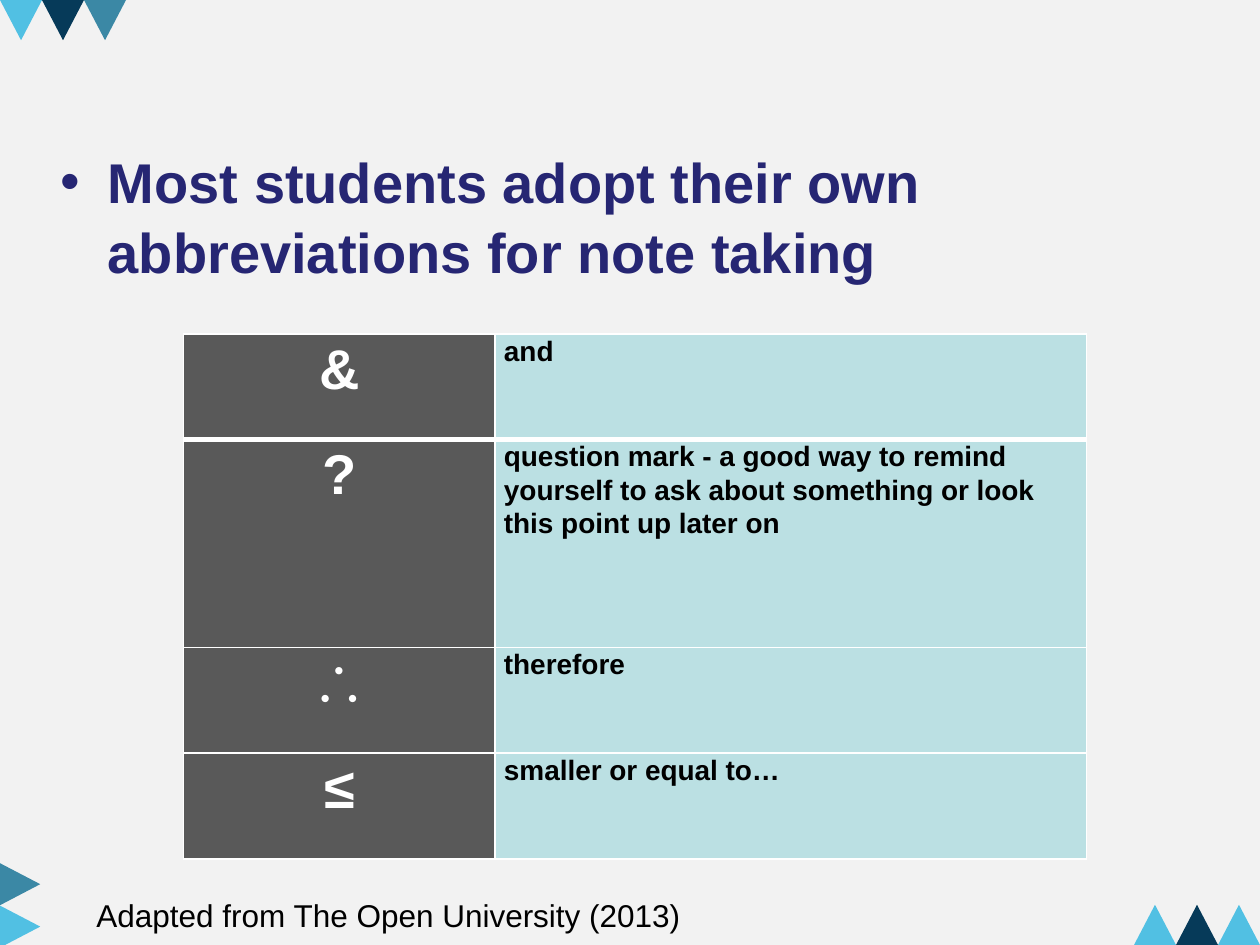
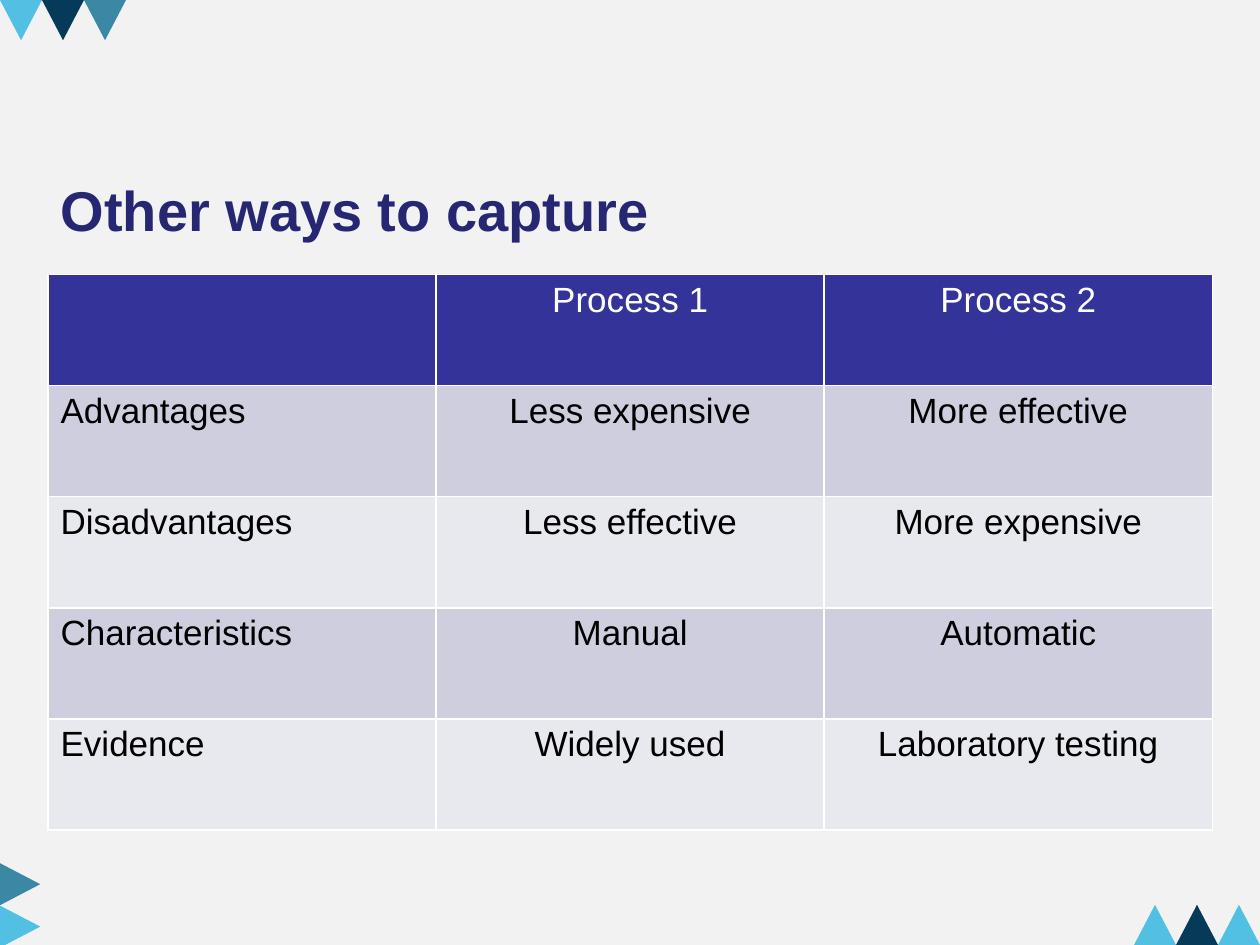
from dataclasses import dataclass

from pptx import Presentation
from pptx.dml.color import RGBColor
from pptx.enum.shapes import MSO_SHAPE as Preset
from pptx.enum.text import MSO_ANCHOR as Anchor, MSO_AUTO_SIZE as AutoSize, PP_ALIGN as Align
from pptx.oxml import parse_xml
from pptx.oxml.ns import nsdecls
from pptx.util import Pt


@dataclass(frozen=True)
class Theme:
    font: str = "Arial"
    background: str = "F2F2F2"
    sky: str = "51C0E3"
    navy: str = "063A59"
    teal: str = "3B88A5"
    heading: str = "262673"
    black: str = "000000"
    white: str = "FFFFFF"
    symbol_fill: str = "595959"
    meaning_fill: str = "BBE0E3"
    header_fill: str = "333399"
    band_fills: tuple = ("CECEDE", "E8E8EF")
    heading_size: int = 32
    table_size: int = 20
    caption_size: int = 18
    meaning_size: int = 16


theme = Theme()


def write(frame, text, size, colour, bold=False, align=Align.LEFT, **para_format):
    frame.word_wrap = True
    para = frame.paragraphs[0]
    span = para.add_run()
    span.text = text
    for name, value in {"alignment": align, "space_before": Pt(0), **para_format}.items():
        setattr(para, name, value)
    for name, value in {"name": theme.font, "size": Pt(size), "bold": bold}.items():
        setattr(span.font, name, value)
    span.font.color.rgb = RGBColor.from_string(colour)


def paint_cell(cell, fill, top=1, bottom=1):
    """Fill a cell and give it white borders; top and bottom are widths in points."""
    properties = cell._tc.get_or_add_tcPr()
    for side, width in {"L": 1, "R": 1, "T": top, "B": bottom}.items():
        properties.append(parse_xml(
            f'<a:ln{side} {nsdecls("a")} w="{Pt(width)}"><a:solidFill>'
            f'<a:srgbClr val="{theme.white}"/></a:solidFill></a:ln{side}>'))
    cell.fill.solid()
    cell.fill.fore_color.rgb = RGBColor.from_string(fill)


deck = Presentation()
deck.slide_width, deck.slide_height = Pt(720), Pt(540)
backdrop = deck.slide_master.background.fill
backdrop.solid()
backdrop.fore_color.rgb = RGBColor.from_string(theme.background)

content_layout, title_only_layout = deck.slide_layouts[1], deck.slide_layouts[5]
symbols_page = deck.slides.add_slide(content_layout)
processes_page = deck.slides.add_slide(title_only_layout)

# Corner triangles: left, top, rotation, colours, step across, step down
triangle_rows = [
    (0, 0, 180, (theme.sky, theme.navy, theme.teal), 24, 0),
    (648, 517, 0, (theme.sky, theme.navy, theme.sky), 24, 0),
    (-0.5, 493.75, 90, (theme.teal, theme.sky), 0, 24.25),
]
for page in deck.slides:
    for left, top, rotation, colours, across, down in triangle_rows:
        for index, colour in enumerate(colours):
            triangle = page.shapes.add_shape(
                Preset.ISOSCELES_TRIANGLE,
                Pt(left + index * across), Pt(top + index * down), Pt(24), Pt(23))
            triangle.rotation = rotation
            triangle.shadow.inherit = False
            triangle.fill.solid()
            triangle.fill.fore_color.rgb = RGBColor.from_string(colour)
            triangle.line.fill.background()

# Abbreviations for note taking
empty_title = symbols_page.shapes.title._element
empty_title.getparent().remove(empty_title)
statement = symbols_page.placeholders[1]
statement.left, statement.top, statement.width, statement.height = Pt(27.4), Pt(79), Pt(662), Pt(340)
statement.text_frame.auto_size = AutoSize.NONE
write(statement.text_frame, "Most students adopt their own abbreviations for note taking",
      theme.heading_size, theme.heading, bold=True, line_spacing=1.04)

meanings = [
    ("&", "and"),
    ("?", "question mark - a good way to remind yourself to ask about something "
          "or look this point up later on"),
    ("∴", "therefore"),
    ("≤", "smaller or equal to…"),
]
row_heights = (60.4, 118.8, 60.4, 60.4)
symbol_table = symbols_page.shapes.add_table(
    len(meanings), 2, Pt(105), Pt(190.8), Pt(516), Pt(sum(row_heights))).table
for column, width in zip(symbol_table.columns, (178, 338)):
    column.width = Pt(width)
for row, (pair, height) in enumerate(zip(meanings, row_heights)):
    symbol_table.rows[row].height = Pt(height)
    styles = [(theme.symbol_fill, theme.heading_size, theme.white, Align.CENTER),
              (theme.meaning_fill, theme.meaning_size, theme.black, Align.LEFT)]
    for column, (text, (fill, size, colour, align)) in enumerate(zip(pair, styles)):
        cell = symbol_table.cell(row, column)
        margins = {"margin_left": 5, "margin_right": 5, "margin_top": 0, "margin_bottom": 0}
        for name, value in margins.items():
            setattr(cell, name, Pt(value))
        paint_cell(cell, fill, top=3 if row == 1 else 1, bottom=3 if row == 0 else 1)
        write(cell.text_frame, text, size, colour, bold=True, align=align, line_spacing=1.07)

caption = symbols_page.shapes.add_textbox(Pt(48), Pt(508.3), Pt(351), Pt(29))
write(caption.text_frame, "Adapted from The Open University (2013)",
      theme.caption_size, theme.black)

# Comparison of two processes
title = processes_page.shapes.title
title.left, title.top, title.width, title.height = Pt(27.4), Pt(92.2), Pt(665), Pt(55)
title.text_frame.vertical_anchor = Anchor.MIDDLE
write(title.text_frame, "Other ways to capture", theme.heading_size, theme.heading, bold=True)

comparison = [
    ("", "Process 1", "Process 2"),
    ("Advantages", "Less expensive", "More effective"),
    ("Disadvantages", "Less effective", "More expensive"),
    ("Characteristics", "Manual", "Automatic"),
    ("Evidence", "Widely used", "Laboratory testing"),
]
process_table = processes_page.shapes.add_table(
    len(comparison), 3, Pt(27.4), Pt(156.8), Pt(665.4), Pt(317.5)).table
for row, texts in enumerate(comparison):
    process_table.rows[row].height = Pt(63.5)
    fill = theme.band_fills[(row - 1) % 2] if row else theme.header_fill
    for column, text in enumerate(texts):
        cell = process_table.cell(row, column)
        paint_cell(cell, fill)
        if text:
            write(cell.text_frame, text, theme.table_size,
                  theme.black if row else theme.white,
                  align=Align.CENTER if column else Align.LEFT)

deck.save("out.pptx")
